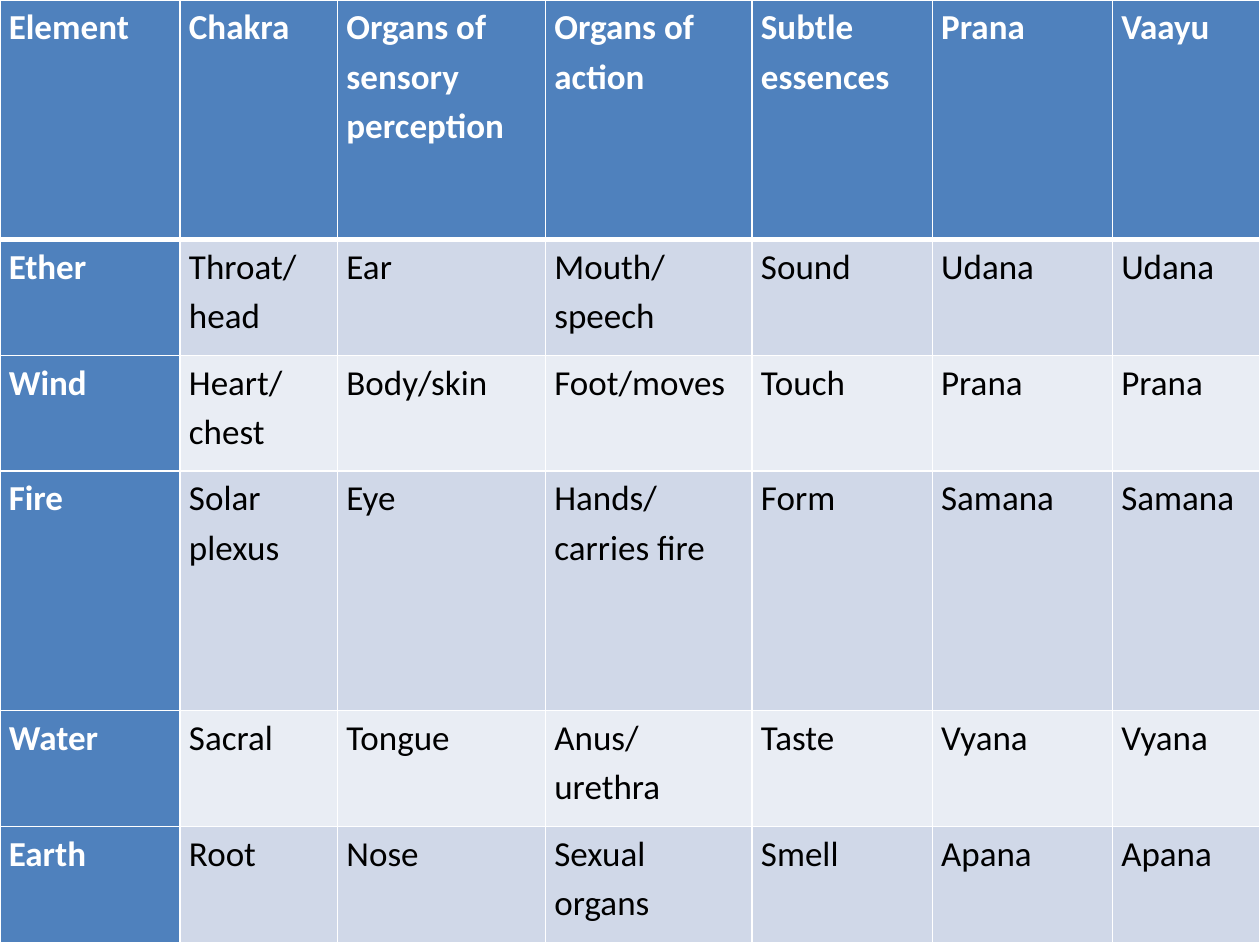
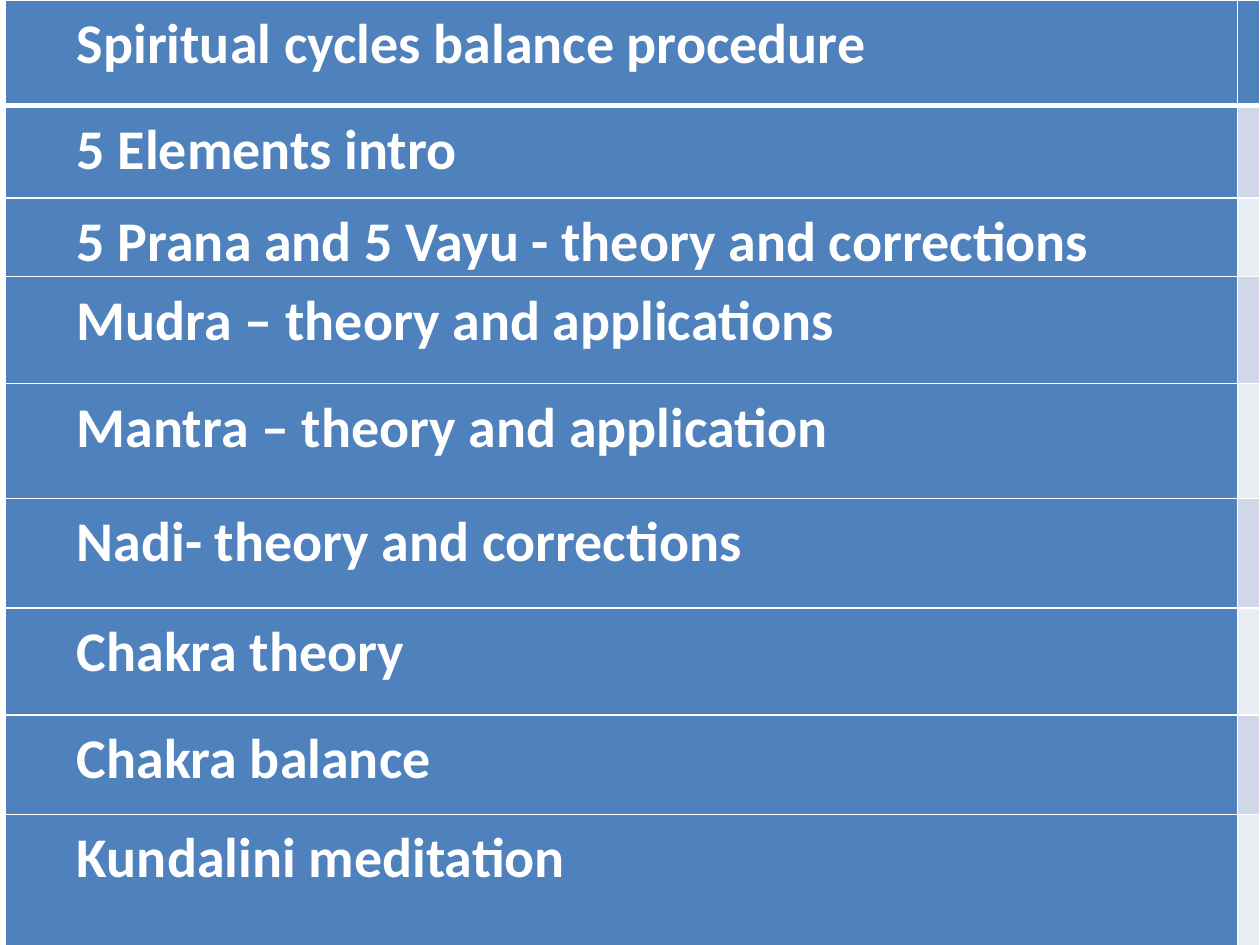
from lxml import etree
from pptx import Presentation
from pptx.dml.color import RGBColor
from pptx.oxml.ns import qn
from pptx.util import Inches, Pt

# Content: a newline starts a new paragraph
ELEMENTS = [
    ["Element", "Chakra", "Organs of sensory perception", "Organs of action",
     "Subtle essences", "Prana", "Vaayu"],
    ["Ether", "Throat/\nhead", "Ear", "Mouth/\nspeech", "Sound", "Udana", "Udana"],
    ["Wind", "Heart/\nchest", "Body/skin", "Foot/moves", "Touch", "Prana", "Prana"],
    ["Fire", "Solar plexus", "Eye", "Hands/carries fire", "Form", "Samana", "Samana"],
    ["Water", "Sacral", "Tongue", "Anus/\nurethra", "Taste", "Vyana", "Vyana"],
    ["Earth", "Root", "Nose", "Sexual organs", "Smell", "Apana", "Apana"],
]
TOPICS = [
    "Spiritual cycles balance procedure",
    "5 Elements intro",
    "5 Prana and 5 Vayu - theory and corrections",
    "Mudra – theory and applications",
    "Mantra – theory and application",
    "Nadi- theory and corrections",
    "Chakra theory",
    "Chakra balance",
    "Kundalini meditation",
]
SHORT, TALL = 0.92, 1.9
TABLES = [
    dict(left=0, size=20, indent=0, rows=ELEMENTS,
         widths=[1.43, 1.25, 1.65, 1.64, 1.43, 1.43, 1.17],
         heights=[TALL, SHORT, SHORT, TALL, SHORT, SHORT]),
    dict(left=0.04, size=32, indent=0.5, rows=[[topic, ""] for topic in TOPICS],
         widths=[9.78, 0.18],
         heights=[0.84, 0.73, 0.53, 0.85, 0.91, 0.87, 0.85, 0.79, 1.86]),
]

# Shared style
COLORS = {"head": "4F81BD", "odd": "D0D8E8", "even": "E9EDF4",
          "light": "FFFFFF", "dark": "000000"}
FONT = "Calibri"
THIN, THICK = 1, 3


def rgb(name):
    return RGBColor.from_string(COLORS[name])


def add_borders(cell, row):
    """Rule all four sides, with a thick line under the header row."""
    props = cell._tc.get_or_add_tcPr()
    widths = {"L": THIN, "R": THIN, "T": THICK if row == 1 else THIN,
              "B": THICK if row == 0 else THIN}
    for spot, (side, width) in enumerate(widths.items()):
        line = etree.Element(qn(f"a:ln{side}"), w=str(Pt(width)))
        fill = etree.SubElement(line, qn("a:solidFill"))
        etree.SubElement(fill, qn("a:srgbClr"), val=COLORS["light"])
        props.insert(spot, line)


def write_text(cell, text, size, indent, strong):
    cell.margin_left = cell.margin_right = Inches(0.07)
    cell.margin_top = cell.margin_bottom = 0
    cell.text = text
    for para in cell.text_frame.paragraphs:
        para.line_spacing = 1.15
        if indent:
            props = para._p.get_or_add_pPr()
            props.set("marL", str(Inches(indent)))
            props.set("indent", "0")
        font = para.font
        font.name, font.size, font.bold = FONT, Pt(size), strong
        font.color.rgb = rgb("light" if strong else "dark")


def add_grid(slide, left, size, indent, rows, widths, heights):
    frame = slide.shapes.add_table(
        len(rows), len(widths), Inches(left), 0,
        Inches(sum(widths)), Inches(sum(heights)))
    table = frame.table
    table.first_col = True
    for col, width in zip(table.columns, widths):
        col.width = Inches(width)
    for line, height in zip(table.rows, heights):
        line.height = Inches(height)
    for r, texts in enumerate(rows):
        for c, text in enumerate(texts):
            cell = table.cell(r, c)
            strong = r == 0 or c == 0
            band = "odd" if r % 2 else "even"
            cell.fill.solid()
            cell.fill.fore_color.rgb = rgb("head" if strong else band)
            add_borders(cell, r)
            # Blank cells take a small size so that they never stretch a row
            write_text(cell, text, size if text else 18, indent if text else 0, strong)


def main():
    prs = Presentation()
    prs.slide_width, prs.slide_height = Inches(10), Inches(7.5)
    for spec in TABLES:
        add_grid(prs.slides.add_slide(prs.slide_layouts[6]), **spec)
    prs.save("out.pptx")


if __name__ == "__main__":
    main()
